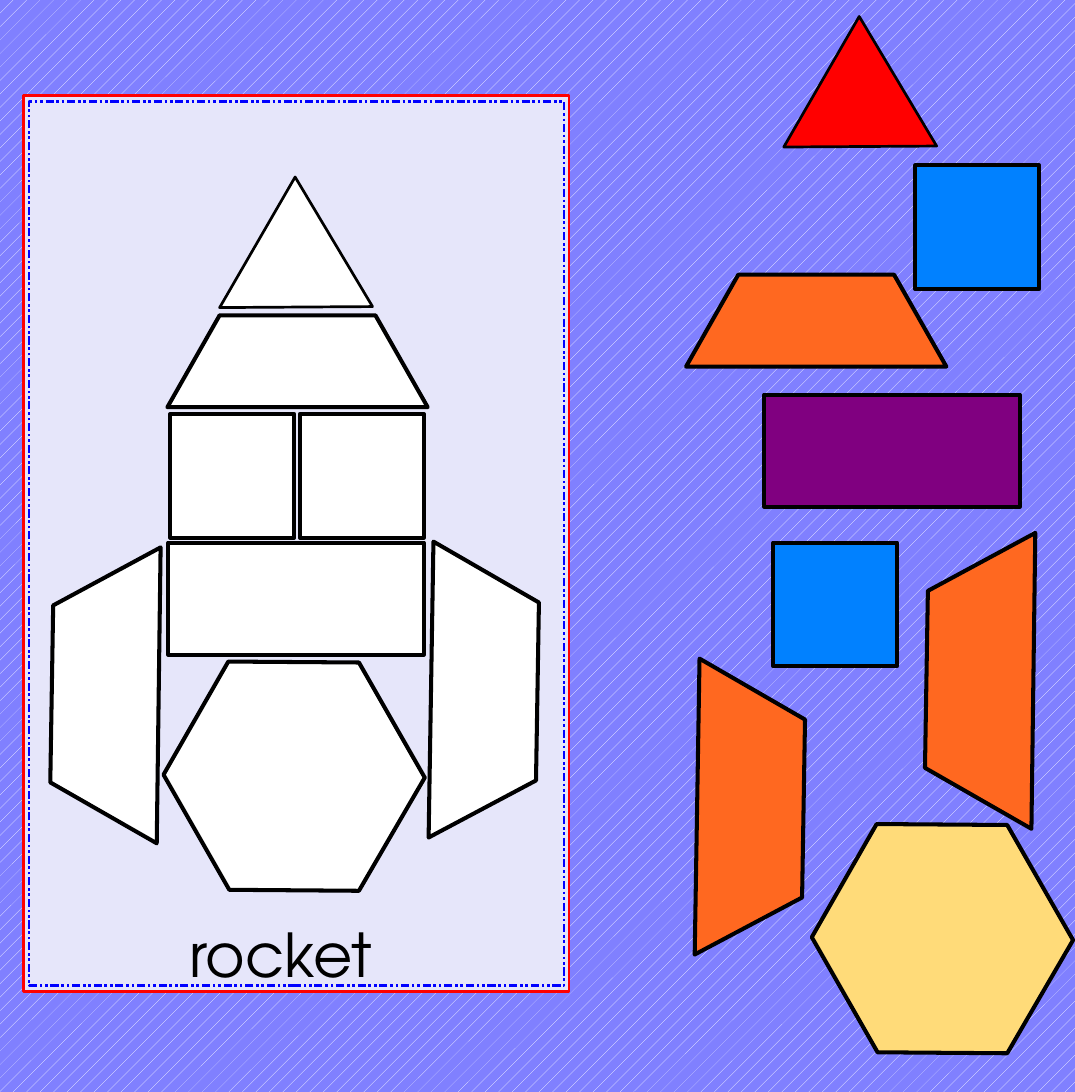
from pptx import Presentation
from pptx.dml.color import RGBColor
from pptx.enum.dml import MSO_LINE, MSO_PATTERN
from pptx.enum.shapes import MSO_SHAPE
from pptx.oxml.ns import qn
from pptx.util import Inches, Pt

COLORS = {
    "stripe": "FFFFFF", "background": "8080FF", "card": "E6E6FA",
    "border": "FF0000", "dashes": "0000FF", "outline": "000000",
    "blank": "FFFFFF", "triangle": "FF0000", "square": "0181FF",
    "trapezoid": "FF6820", "bar": "800080", "left fin": "FF6820",
    "right fin": "FF6820", "hexagon": "FFDB79",
}
FONT = "TeX Gyre Adventor"

# Width and height of the rectangular blocks
BLOCKS = {"square": (1.28, 1.28), "bar": (2.64, 1.16)}
# Corners of the other pieces, from the top left of each piece
OUTLINES = {
    "triangle": [(0.78, 0), (0, 1.35), (1.58, 1.34)],
    "trapezoid": [(2.69, 0.95), (2.15, 0), (0.54, 0), (0, 0.95)],
    "left fin": [(1.1, 3.06), (0, 2.43), (0.03, 0.6), (1.14, 0)],
    "right fin": [(0, 3.06), (1.11, 2.47), (1.14, 0.63), (0.05, 0)],
    "hexagon": [(0, 1.17), (0.67, 0), (2.02, 0.01),
                (2.7, 1.2), (2.02, 2.37), (0.68, 2.36)],
}
# Positions inside the card
ROCKET = [
    ("hexagon", 1.45, 5.85), ("square", 1.52, 3.29), ("bar", 1.5, 4.62),
    ("trapezoid", 1.49, 2.27), ("right fin", 4.19, 4.61),
    ("triangle", 2.03, 0.84), ("left fin", 0.28, 4.67),
    ("square", 2.86, 3.29),
]
# Positions inside the area of loose pieces
LOOSE = [
    ("hexagon", 1.3, 8.35), ("square", 0.9, 5.44), ("bar", 0.81, 3.91),
    ("trapezoid", 0, 2.67), ("right fin", 0.09, 6.64),
    ("triangle", 1.01, 0), ("left fin", 2.47, 5.34),
    ("square", 2.37, 1.54),
]


def rgb(name):
    return RGBColor.from_string(COLORS[name])


def style(s, fill, line, width):
    """Set fill and line; a fill of None leaves the shape open."""
    s.shadow.inherit = False
    if fill:
        s.fill.solid()
        s.fill.fore_color.rgb = rgb(fill)
    else:
        s.fill.background()
    s.line.color.rgb = rgb(line)
    s.line.width = Pt(width)


def add_rectangle(shapes, x, y, w, h, fill, line, width):
    s = shapes.add_shape(MSO_SHAPE.RECTANGLE, Inches(x), Inches(y),
                         Inches(w), Inches(h))
    style(s, fill, line, width)
    return s


def add_piece(shapes, kind, x, y, fill):
    width = 2 if kind == "triangle" else 3
    if kind in BLOCKS:
        add_rectangle(shapes, x, y, *BLOCKS[kind], fill, "outline", width)
        return
    points = [(Inches(px), Inches(py)) for px, py in OUTLINES[kind]]
    builder = shapes.build_freeform(*points[0])
    builder.add_line_segments(points[1:], close=True)
    s = builder.convert_to_shape(Inches(x), Inches(y))
    style(s, fill, "outline", width)


def add_card(slide, x, y, w, h):
    """Card with a red border and a dashed blue one inside it."""
    shapes = slide.shapes.add_group_shape().shapes
    add_rectangle(shapes, x, y, w, h, "card", "border", 2)
    inner = add_rectangle(shapes, x + 0.06, y + 0.06, w - 0.11, h - 0.12,
                          None, "dashes", 2)
    inner.line.dash_style = MSO_LINE.DASH_DOT_DOT
    for dash in inner._element.iter(qn("a:prstDash")):
        dash.set("val", "sysDashDotDot")


def add_rocket(slide, x, y):
    shapes = slide.shapes.add_group_shape().shapes
    for kind, dx, dy in ROCKET:
        add_piece(shapes, kind, x + dx, y + dy, "blank")


def add_loose_pieces(slide, x, y):
    for kind, dx, dy in LOOSE:
        add_piece(slide.shapes, kind, x + dx, y + dy, kind)


def add_label(slide, text, x, y, w, h):
    tf = slide.shapes.add_textbox(Inches(x), Inches(y),
                                  Inches(w), Inches(h)).text_frame
    tf.word_wrap = True
    r = tf.paragraphs[0].add_run()
    r.text = text
    r.font.name = FONT
    r.font.size = Pt(45)
    r.font.color.rgb = rgb("outline")


def main():
    prs = Presentation()
    prs.slide_width, prs.slide_height = Inches(11.11), Inches(11.29)
    slide = prs.slides.add_slide(prs.slide_layouts[6])
    fill = slide.background.fill
    fill.patterned()
    fill.pattern = MSO_PATTERN.PERCENT_5
    fill.fore_color.rgb = rgb("stripe")
    fill.back_color.rgb = rgb("background")

    card_x, card_y = 0.24, 0.99
    add_card(slide, card_x, card_y, 5.64, 9.26)
    add_rocket(slide, card_x, card_y)
    add_loose_pieces(slide, 7.09, 0.17)
    add_label(slide, "rocket", card_x + 1.62, card_y + 8.44, 2.78, 0.86)
    prs.save("out.pptx")


if __name__ == "__main__":
    main()
